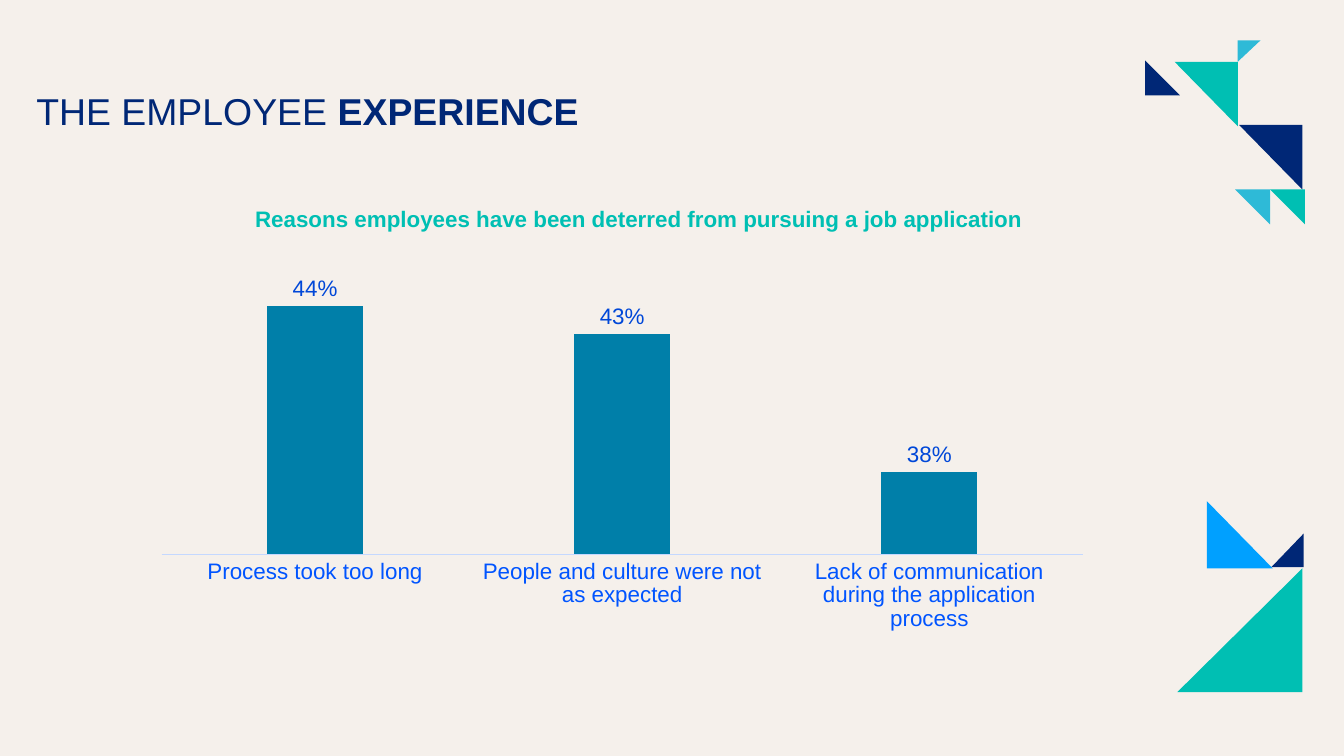
"""Build the employee experience slide with a column chart and triangle decor."""
from dataclasses import dataclass

from pptx import Presentation
from pptx.chart.data import CategoryChartData
from pptx.dml.color import RGBColor
from pptx.enum import chart as ch, text
from pptx.util import Inches, Pt


@dataclass(frozen=True)
class Theme:
    font: str = "Arial"
    background: str = "F5F0EB"
    navy: str = "002776"
    teal: str = "00BFB3"
    sky: str = "2EBAD7"
    azure: str = "00A0FF"
    bar: str = "007FA9"
    axis_text: str = "0054FF"
    axis_line: str = "C4D8FF"
    label: str = "0047D8"
    title_size: int = 20
    body_size: int = 12
    chart_size: int = 10


THEME = Theme()

TRIANGLES = [
    (THEME.azure, [(8.98, 4.23), (9.47, 4.23), (8.98, 3.73)]),
    (THEME.teal, [(9.69, 5.15), (9.69, 4.23), (8.76, 5.15)]),
    (THEME.navy, [(9.7, 4.22), (9.7, 3.97), (9.46, 4.22)]),
    (THEME.navy, [(8.52, 0.71), (8.78, 0.71), (8.52, 0.45)]),
    (THEME.sky, [(9.45, 1.41), (9.19, 1.41), (9.45, 1.67)]),
    (THEME.teal, [(9.71, 1.41), (9.45, 1.41), (9.71, 1.67)]),
    (THEME.teal, [(9.21, 0.46), (8.74, 0.46), (9.21, 0.94)]),
    (THEME.sky, [(9.21, 0.3), (9.21, 0.46), (9.38, 0.3)]),
    (THEME.navy, [(9.69, 0.93), (9.22, 0.93), (9.69, 1.41)]),
]

REASONS = {
    "Process took too long": 0.44,
    "People and culture were not as expected": 0.43,
    "Lack of communication during the application process": 0.38,
}


def rgb(color):
    return RGBColor.from_string(color)


def set_font(font, size, color):
    font.name = THEME.font
    font.size = Pt(size)
    font.color.rgb = rgb(color)


def add_triangle(s, color, points):
    start, *rest = [(Inches(x), Inches(y)) for x, y in points]
    builder = s.shapes.build_freeform(*start)
    builder.add_line_segments(rest, close=True)
    sp = builder.convert_to_shape()
    sp.shadow.inherit = False
    sp.fill.solid()
    sp.fill.fore_color.rgb = rgb(color)
    sp.line.fill.background()


def add_text(s, box, runs, size, color):
    """Add a text box of (text, bold) runs and return its paragraph."""
    tf = s.shapes.add_textbox(*map(Inches, box)).text_frame
    tf.word_wrap = True
    tf.vertical_anchor = text.MSO_ANCHOR.TOP
    tf.margin_left = tf.margin_right = tf.margin_top = tf.margin_bottom = 0
    p = tf.paragraphs[0]
    set_font(p.font, size, color)
    for words, bold in runs:
        r = p.add_run()
        r.text = words
        r.font.bold = bold
    return p


def add_reasons_chart(s, box):
    data = CategoryChartData(number_format="0%")
    data.categories = list(REASONS)
    data.add_series("Series 1", list(REASONS.values()))
    chart = s.shapes.add_chart(
        ch.XL_CHART_TYPE.COLUMN_CLUSTERED, *map(Inches, box), data
    ).chart
    chart.has_legend = False
    chart.has_title = False
    set_font(chart.font, THEME.chart_size, THEME.navy)

    axis = chart.category_axis
    axis.major_tick_mark = ch.XL_TICK_MARK.NONE
    axis.format.line.color.rgb = rgb(THEME.axis_line)
    axis.format.line.width = Pt(0.75)
    set_font(axis.tick_labels.font, THEME.body_size, THEME.axis_text)

    values = chart.value_axis
    values.visible = False
    values.has_major_gridlines = False
    values.minimum_scale, values.maximum_scale = 0.35, 0.45

    plot = chart.plots[0]
    plot.vary_by_categories = False
    plot.gap_width, plot.overlap = 219, -27
    fill = plot.series[0].format.fill
    fill.solid()
    fill.fore_color.rgb = rgb(THEME.bar)

    labels = plot.series[0].data_labels
    labels.show_value = True
    labels.number_format = "0%"
    labels.number_format_is_linked = False
    labels.position = ch.XL_LABEL_POSITION.OUTSIDE_END
    set_font(labels.font, THEME.body_size, THEME.label)


def main():
    prs = Presentation()
    prs.slide_width = Inches(10)
    prs.slide_height = prs.slide_width * 9 // 16
    s = prs.slides.add_slide(prs.slide_layouts[6])
    s.background.fill.solid()
    s.background.fill.fore_color.rgb = rgb(THEME.background)

    for color, points in TRIANGLES:
        add_triangle(s, color, points)

    title = add_text(
        s, (0.27, 0.71, 8.51, 0.52),
        [("THE EMPLOYEE ", False), ("EXPERIENCE", True)],
        THEME.title_size, THEME.navy,
    )
    title.line_spacing = 0.85

    add_reasons_chart(s, (1.06, 2.02, 7.14, 2.73))

    heading = add_text(
        s, (1.06, 1.53, 7.39, 0.52),
        [("Reasons employees have been deterred from pursuing a job application", True)],
        THEME.body_size, THEME.teal,
    )
    heading.alignment = text.PP_ALIGN.CENTER
    heading.space_after = Pt(6)

    prs.save("out.pptx")


if __name__ == "__main__":
    main()
